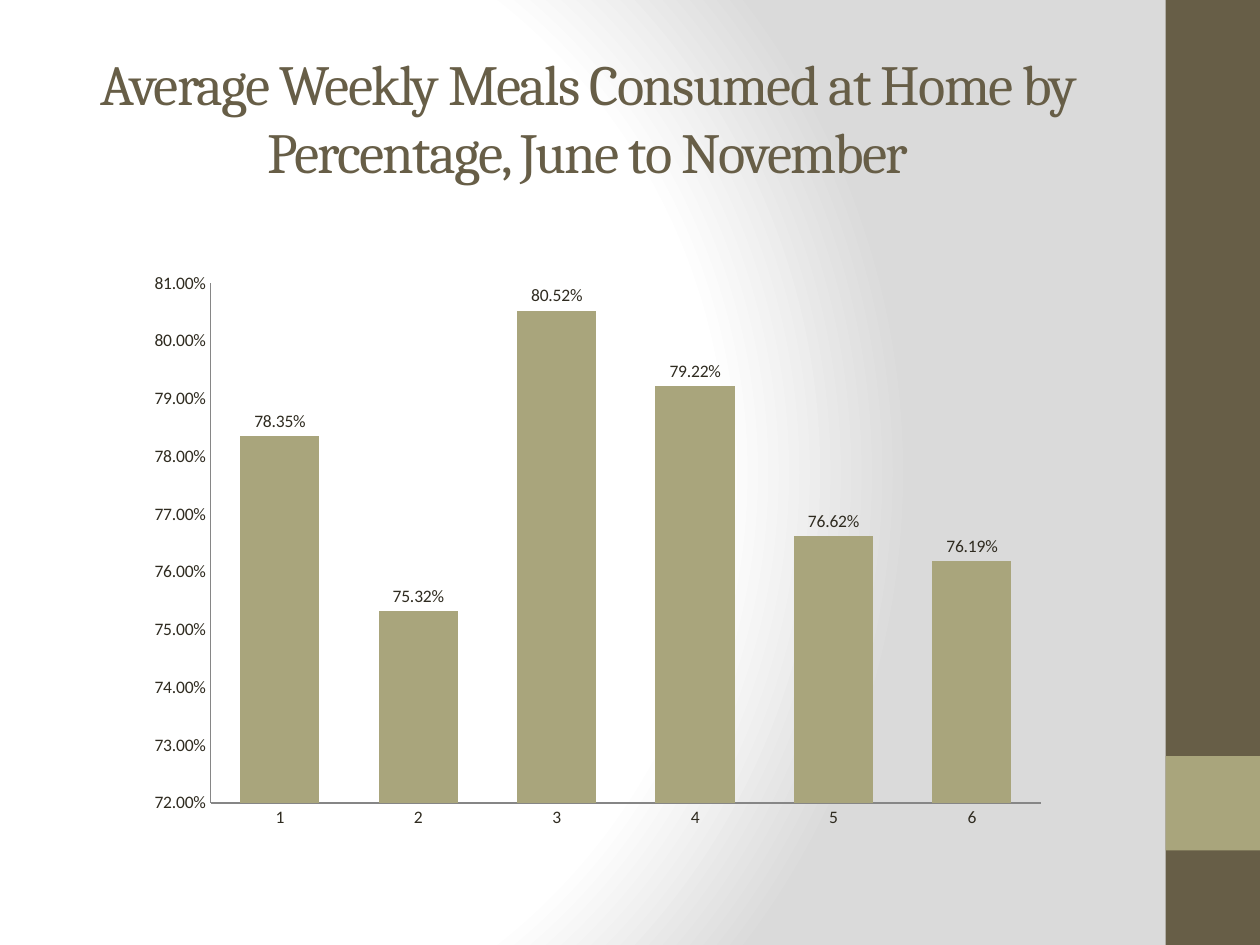
from pptx import Presentation
from pptx.chart.data import CategoryChartData
from pptx.dml.color import RGBColor as Rgb
from pptx.enum.chart import XL_CHART_TYPE as Kind, XL_LABEL_POSITION as Spot
from pptx.enum.chart import XL_TICK_MARK as Tick
from pptx.enum.shapes import MSO_SHAPE as Shape
from pptx.enum.text import MSO_ANCHOR as Anchor, PP_ALIGN as Align
from pptx.oxml import parse_xml
from pptx.oxml.ns import nsdecls
from pptx.util import Inches, Pt
from dataclasses import dataclass


@dataclass(frozen=True)
class Theme:
    dark: str = "675E47"
    sage: str = "A9A57C"
    ink: str = "2F2B20"
    axis: str = "868686"
    pale: str = "DADADA"
    white: str = "FFFFFF"
    head: str = "Cambria"
    body: str = "Calibri"
    big: float = 32.4
    small: float = 10


look = Theme()
hue = Rgb.from_string
deck = Presentation()
deck.slide_width, deck.slide_height = Inches(10), Inches(7.5)
slide = deck.slides.add_slide(deck.slide_layouts[6])


def box(x, y, w, h):
    """Turn shares of the slide's width and height into lengths."""
    wide, high = deck.slide_width, deck.slide_height
    return [round(n) for n in (x * wide, y * high, w * wide, h * high)]


# Background: a round glow that starts left of the middle
stops = "".join(
    f'<a:gs pos="{pos * 1000}"><a:srgbClr val="{tone}"/></a:gs>'
    for pos, tone in ((0, look.white), (75, look.white), (100, look.pale))
)
slide.element.cSld.insert(0, parse_xml(
    f'<p:bg {nsdecls("p", "a")}><p:bgPr><a:gradFill rotWithShape="1">'
    f'<a:gsLst>{stops}</a:gsLst><a:path path="circle">'
    '<a:fillToRect l="20000" t="50000" r="100000" b="50000"/></a:path>'
    '</a:gradFill><a:effectLst/></p:bgPr></p:bg>'
))

# Side band and its square
for top, high, tone in ((0, 1, look.dark), (0.8, 0.1, look.sage)):
    band = slide.shapes.add_shape(Shape.RECTANGLE, *box(0.925, top, 0.075, high))
    band.shadow.inherit = False
    band.fill.solid()
    band.fill.fore_color.rgb = hue(tone)
    band.line.fill.background()

# Title
frame = slide.shapes.add_textbox(*box(0.05, 0.04, 0.833, 0.167)).text_frame
frame.word_wrap = True
frame.vertical_anchor = Anchor.MIDDLE
para = frame.paragraphs[0]
para.alignment = Align.CENTER
run = para.add_run()
run.text = "Average Weekly Meals Consumed at Home by Percentage, June to November"
run.font.name = look.head
run.font.size = Pt(look.big)
run.font.color.rgb = hue(look.dark)
run.font._element.set("spc", "-100")

# Chart
data = CategoryChartData(number_format="0.00%")
data.categories = [str(n) for n in range(1, 7)]
data.add_series("Series 1", (0.7835, 0.7532, 0.8052, 0.7922, 0.7662, 0.7619))
chart = slide.shapes.add_chart(
    Kind.COLUMN_CLUSTERED, *box(0.108, 0.277, 0.733, 0.611), data
).chart
chart.has_legend = chart.has_title = False
chart.font.name = look.body
chart.font.size = Pt(look.small)
chart.font.color.rgb = hue(look.ink)

for axis in (chart.category_axis, chart.value_axis):
    axis.major_tick_mark = axis.minor_tick_mark = Tick.NONE
    axis.has_major_gridlines = False
    axis.format.line.color.rgb = hue(look.axis)
    axis.format.line.width = Pt(1)
scale = chart.value_axis
scale.minimum_scale, scale.maximum_scale, scale.major_unit = 0.72, 0.81, 0.01
scale.tick_labels.number_format = "0.00%"
scale.tick_labels.number_format_is_linked = False

plot = chart.plots[0]
plot.gap_width = 75
plot.vary_by_categories = False
bars = plot.series[0]
bars.format.fill.solid()
bars.format.fill.fore_color.rgb = hue(look.sage)
tags = bars.data_labels
tags.show_value = True
tags.number_format = "0.00%"
tags.number_format_is_linked = False
tags.position = Spot.OUTSIDE_END

deck.save("out.pptx")
